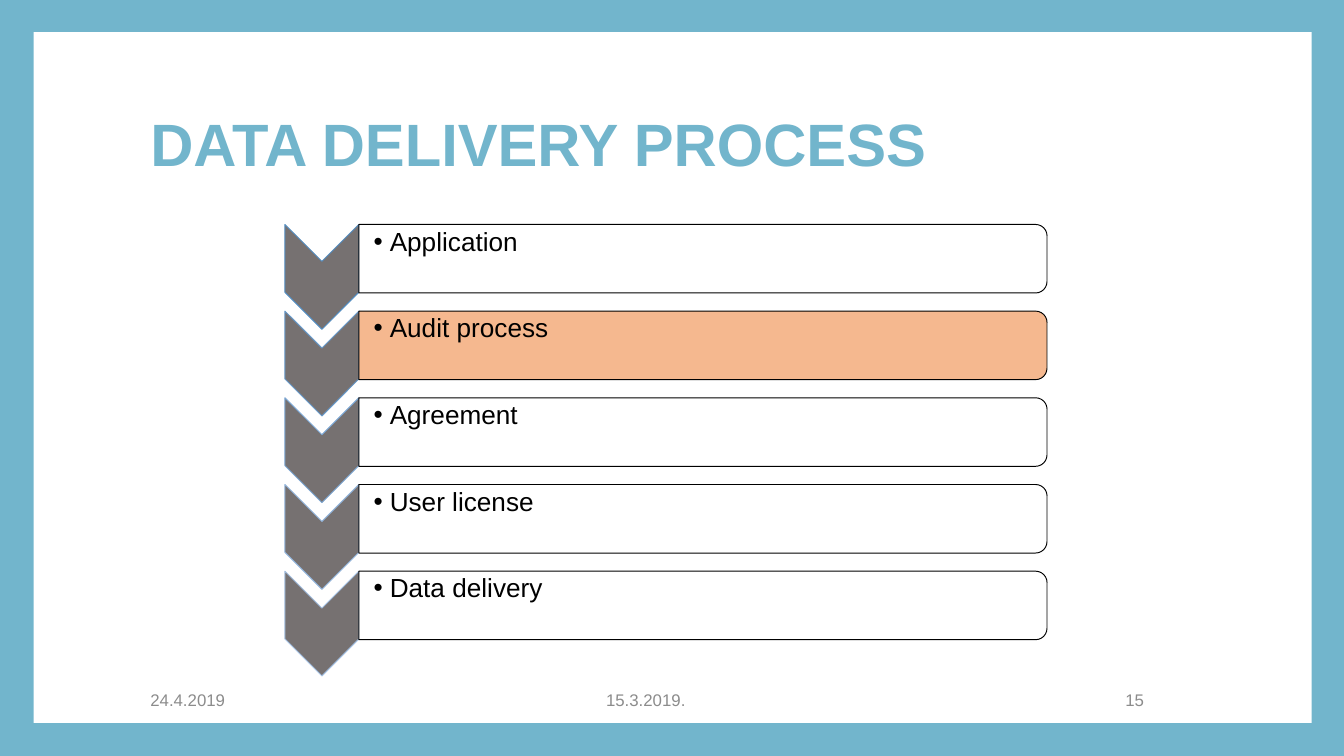
from lxml import etree
from pptx import Presentation
from pptx.dml.color import RGBColor
from pptx.enum import shapes, text
from pptx.oxml import ns
from pptx.util import Inches, Pt

BLUE = RGBColor(0x72, 0xB5, 0xCC)
WHITE = RGBColor(0xFF, 0xFF, 0xFF)
BLACK = RGBColor(0x00, 0x00, 0x00)
GREY = RGBColor(0x8C, 0x8C, 0x8C)
DARK_GREY = RGBColor(0x76, 0x71, 0x71)
ORANGE = RGBColor(0xF4, 0xB1, 0x83)

# Content: step, bar fill, chevron outline
TITLE = "DATA DELIVERY PROCESS"
STEPS = [
    ("Application", WHITE, RGBColor(0x53, 0x8D, 0xC1)),
    ("Audit process", ORANGE, RGBColor(0x67, 0x99, 0xCA)),
    ("Agreement", WHITE, RGBColor(0x7B, 0xA6, 0xD3)),
    ("User license", WHITE, RGBColor(0x90, 0xB3, 0xDB)),
    ("Data delivery", WHITE, RGBColor(0xA5, 0xC1, 0xE3)),
]
# Footer: text, left, width, alignment
FOOTER = [
    ("24.4.2019", 1.02, 2.25, text.PP_ALIGN.LEFT),
    ("15.3.2019.", 3.44, 2.73, text.PP_ALIGN.CENTER),
    ("15", 6.36, 2.25, text.PP_ALIGN.RIGHT),
]

# Slide and step layout in inches
SLIDE_WIDTH = 10
SLIDE_HEIGHT = SLIDE_WIDTH * 9 / 16
FIRST_TOP, LAST_TOP = 1.67, 4.25
PITCH = (LAST_TOP - FIRST_TOP) / (len(STEPS) - 1)
BAR_LEFT, BAR_WIDTH, BAR_HEIGHT = 2.67, 5.12, 0.51
CHEVRON_WIDTH, CHEVRON_HEIGHT = 0.55, 0.78
CHEVRON_LEFT = BAR_LEFT - CHEVRON_WIDTH


def add_text(page, words, area, size, color, bold=False,
             align=text.PP_ALIGN.LEFT, anchor=text.MSO_ANCHOR.MIDDLE):
    box = page.shapes.add_textbox(*map(Inches, area))
    frame = box.text_frame
    frame.word_wrap = True
    frame.vertical_anchor = anchor
    para = frame.paragraphs[0]
    para.alignment = align
    span = para.add_run()
    span.text = words
    span.font.name = "Arial"
    span.font.size = Pt(size)
    span.font.bold = bold
    span.font.color.rgb = color
    return frame


def add_turned(page, kind, left, top, width, height, fill, line):
    """Add a shape turned by 90 degrees that covers the given area."""
    shift = (width - height) / 2
    shape = page.shapes.add_shape(
        kind, Inches(left + shift), Inches(top - shift), Inches(height), Inches(width))
    shape.rotation = 90
    shape.shadow.inherit = False
    shape.fill.solid()
    shape.fill.fore_color.rgb = fill
    shape.line.color.rgb = line
    shape.line.width = Pt(0.5)
    return shape


def set_opacity(shape, percent):
    color = shape.fill._xPr.find(ns.qn("a:solidFill"))[0]
    etree.SubElement(color, ns.qn("a:alpha"), val=str(percent * 1000))


def add_bullet(para, indent):
    props = para._p.get_or_add_pPr()
    props.set("marL", str(Inches(indent)))
    props.set("indent", str(-Inches(indent)))
    etree.SubElement(props, ns.qn("a:buFont"), typeface="Arial")
    etree.SubElement(props, ns.qn("a:buChar"), char="•")


def add_step(page, top, words, fill, outline):
    add_turned(page, shapes.MSO_SHAPE.CHEVRON, CHEVRON_LEFT, top,
               CHEVRON_WIDTH, CHEVRON_HEIGHT, DARK_GREY, outline)
    bar = add_turned(page, shapes.MSO_SHAPE.ROUND_2_SAME_RECTANGLE, BAR_LEFT, top,
                     BAR_WIDTH, BAR_HEIGHT, fill, BLACK)
    set_opacity(bar, 90)
    frame = add_text(page, words, (BAR_LEFT, top + 0.02, 5.09, 0.46), 14, BLACK,
                     anchor=text.MSO_ANCHOR.TOP)
    frame.margin_left = Inches(0.11)
    frame.margin_top = frame.margin_right = frame.margin_bottom = Inches(0.01)
    frame.paragraphs[0].line_spacing = 0.9
    add_bullet(frame.paragraphs[0], 0.12)


def main():
    deck = Presentation()
    deck.slide_width, deck.slide_height = Inches(SLIDE_WIDTH), Inches(SLIDE_HEIGHT)
    page = deck.slides.add_slide(deck.slide_layouts[6])

    # Blue frame around a white panel
    page.background.fill.solid()
    page.background.fill.fore_color.rgb = BLUE
    panel = page.shapes.add_shape(
        shapes.MSO_SHAPE.RECTANGLE, *map(Inches, (0.25, 0.24, 9.51, 5.14)))
    panel.shadow.inherit = False
    panel.fill.solid()
    panel.fill.fore_color.rgb = WHITE
    panel.line.fill.background()

    # Title and footer
    title = add_text(page, TITLE, (1.02, 0.55, 8.29, 1.09), 32, BLUE, bold=True)
    title.paragraphs[0].line_spacing = 0.9
    for words, left, width, align in FOOTER:
        add_text(page, words, (left, 5.06, width, 0.3), 9, GREY, align=align)

    # Process steps
    for row, (words, fill, outline) in enumerate(STEPS):
        add_step(page, FIRST_TOP + row * PITCH, words, fill, outline)

    deck.save("out.pptx")


if __name__ == "__main__":
    main()
